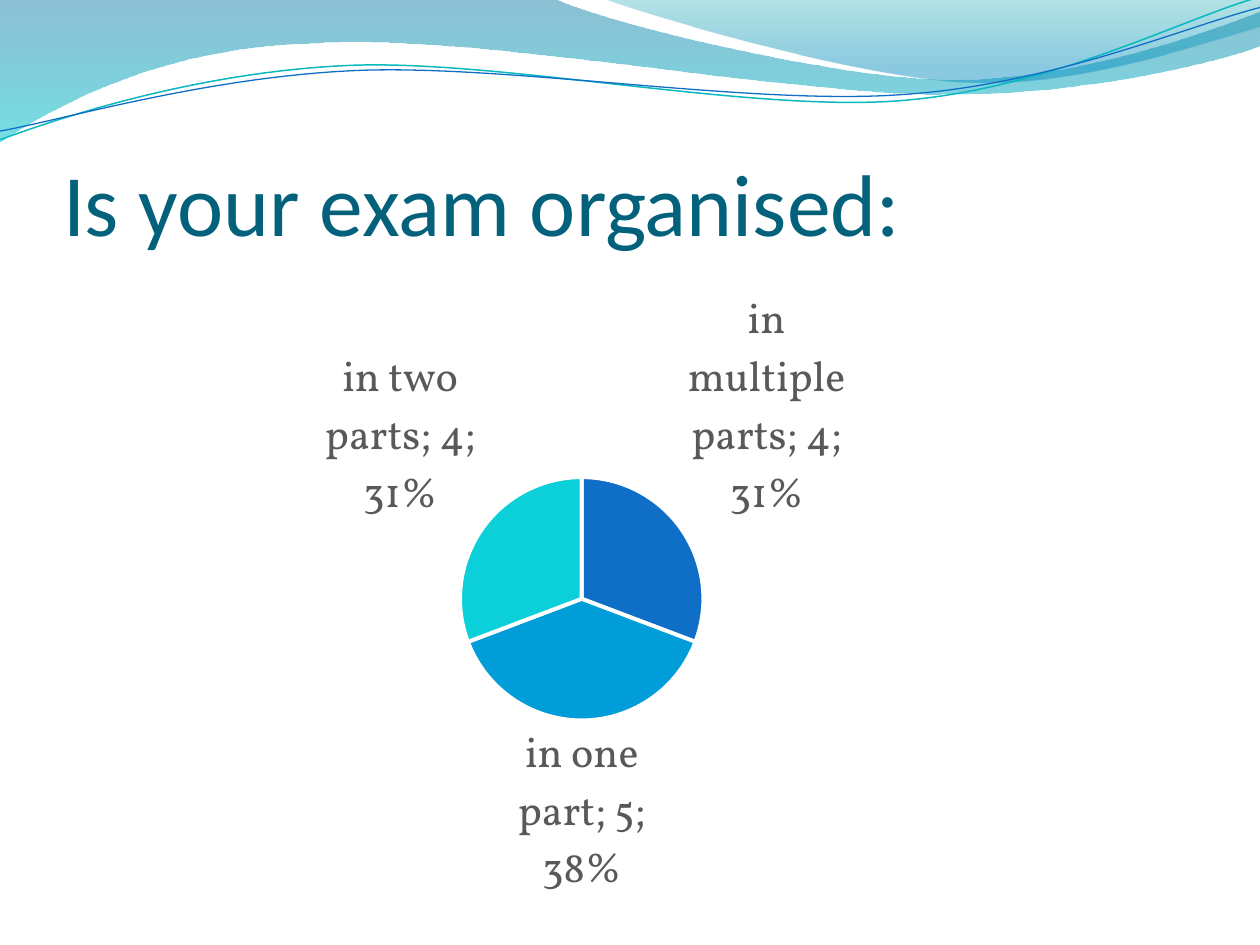
from math import cos, radians, sin

from lxml import etree
from pptx import Presentation
from pptx.chart.data import CategoryChartData
from pptx.dml.color import RGBColor
from pptx.enum.chart import XL_CHART_TYPE, XL_LABEL_POSITION
from pptx.enum.text import MSO_ANCHOR, PP_ALIGN
from pptx.oxml import parse_xml
from pptx.oxml.ns import nsdecls, qn
from pptx.util import Pt

PIE = XL_CHART_TYPE.PIE
OUTSIDE_END = XL_LABEL_POSITION.OUTSIDE_END
BOTTOM = MSO_ANCHOR.BOTTOM
LEFT = PP_ALIGN.LEFT
TITLE_ONLY = 5

WHITE = RGBColor(0xFF, 0xFF, 0xFF)
BLACK = RGBColor(0x00, 0x00, 0x00)
GREY = RGBColor(0x59, 0x59, 0x59)
TITLE_TEAL = RGBColor(0x04, 0x61, 0x7B)
LINE_TEAL = RGBColor(0x0A, 0xB8, 0xBF)
BLUE = RGBColor(0x0F, 0x6F, 0xC6)
SKY = RGBColor(0x00, 0x9D, 0xD9)
TURQUOISE = RGBColor(0x0B, 0xD0, 0xD9)
DEEP_TEAL = RGBColor(0x00, 0x74, 0xA1)
CYAN = RGBColor(0x00, 0xC6, 0xCF)
SEA = RGBColor(0x00, 0xA1, 0xA9)
OCEAN = RGBColor(0x00, 0x8B, 0xBF)

# Outlines in points: one point is a straight step, three are a Bezier curve
WIDE_WAVE = [[(0, 0)], [(316.8, -0.7)],
             [(342.7, 12.2), (478.1, 45.4), (545.8, 45.4)],
             [(614.2, 45.4), (689.8, 18.7), (720, 6.5)], [(720.7, 25.9)],
             [(707.8, 31.7), (626.4, 54.7), (537.1, 54)],
             [(447.8, 54), (275, 20.2), (185, 24.5)],
             [(92.9, 25.9), (33.1, 59.8), (-0.7, 81.4)]]
RIGHT_WAVE = [[(344.9, -0.7)], [(366.5, 7.9), (491, 44.6), (553.7, 46.8)],
              [(616.3, 49.7), (691.9, 23), (720, 15.1)], [(720, 0)]]
TEAL_LINE = [[(0, 79.9)], [(34.6, 67), (113.8, 41), (199.4, 37.4)],
             [(284.4, 33.8), (427, 64.1), (513.4, 57.6)],
             [(599.8, 51.1), (675.4, 10.8), (718.6, -1.4)]]
BLUE_LINE = [[(0, 74.9)], [(33.8, 69.1), (118.1, 43.9), (203.8, 40.3)],
             [(290.2, 36.7), (429.8, 60.5), (516.2, 54)],
             [(601.9, 48.2), (677.5, 15.1), (720, 4.3)]]
LINE_CENTER = (359.5, 41.5)
LINE_TILT = 2.7


def turn(point, center, degrees):
    """Turn a point clockwise around a center."""
    dx, dy = point[0] - center[0], point[1] - center[1]
    c, s = cos(radians(degrees)), sin(radians(degrees))
    return center[0] + dx * c - dy * s, center[1] + dx * s + dy * c


def add_outline(s, outline, close):
    steps = [[(Pt(x), Pt(y)) for x, y in step] for step in outline]
    builder = s.shapes.build_freeform(*steps[0][0])
    builder.add_line_segments([step[-1] for step in steps[1:]], close=close)
    sp = builder.convert_to_shape()
    sp.shadow.inherit = False

    # Give the curved steps their control points
    segments = list(sp._element.iter(qn("a:lnTo")))
    for segment, step in zip(segments, steps[1:]):
        if len(step) == 3:
            curve = etree.Element(qn("a:cubicBezTo"))
            for x, y in step:
                etree.SubElement(curve, qn("a:pt"),
                                 x=str(x - sp.left), y=str(y - sp.top))
            segment.getparent().replace(segment, curve)
    return sp


def add_wave(s, outline, stops):
    """Filled wave; stops are (position %, colour, opacity %)."""
    sp = add_outline(s, outline, True)
    sp.line.fill.background()
    sp.fill.background()
    grad = parse_xml(f'<a:gradFill {nsdecls("a")} rotWithShape="1"><a:gsLst/>'
                     '<a:lin ang="5400000" scaled="0"/></a:gradFill>')
    for position, color, opacity in stops:
        grad[0].append(parse_xml(
            f'<a:gs {nsdecls("a")} pos="{position * 1000}"><a:srgbClr val="{color}">'
            f'<a:alpha val="{opacity * 1000}"/></a:srgbClr></a:gs>'))
    spPr = sp._element.spPr
    spPr.replace(spPr.find(qn("a:noFill")), grad)


def add_wave_line(s, outline, color, width):
    """Open curve, laid level and then tilted as a shape."""
    level = [[turn(point, LINE_CENTER, LINE_TILT) for point in step]
             for step in outline]
    sp = add_outline(s, level, False)
    sp.rotation = 360 - LINE_TILT
    sp.fill.background()
    sp.line.color.rgb = color
    sp.line.width = Pt(width)


def set_font(font, name, size, color):
    font.name = name
    font.size = Pt(size)
    font.color.rgb = color


def set_title(s, text):
    title = s.shapes.title
    title.left, title.top = Pt(36), Pt(55.4)
    title.width, title.height = Pt(648), Pt(90)
    tf = title.text_frame
    tf.word_wrap = True
    tf.vertical_anchor = BOTTOM
    tf.margin_left = tf.margin_right = tf.margin_bottom = 0
    tf.margin_top = Pt(3.6)
    p = tf.paragraphs[0]
    p.alignment = LEFT
    r = p.add_run()
    r.text = text
    set_font(r.font, "Calibri", 50, TITLE_TEAL)


def add_pie(s, slices):
    """Pie chart; slices are (category, value, colour)."""
    data = CategoryChartData()
    data.categories = [name for name, _, _ in slices]
    data.add_series("Series 1", [value for _, value, _ in slices])
    chart = s.shapes.add_chart(PIE, Pt(42.5), Pt(162), Pt(572.4), Pt(362.9),
                               data).chart
    chart.has_title = False
    chart.has_legend = False
    set_font(chart.font, "Vollkorn", 10, BLACK)
    plot = chart.plots[0]
    plot.vary_by_categories = True
    for i, (_, _, color) in enumerate(slices):
        point = plot.series[0].points[i].format
        point.fill.solid()
        point.fill.fore_color.rgb = color
        point.line.color.rgb = WHITE
        point.line.width = Pt(2.25)

    # Labels: category; value; share
    labels = plot.series[0].data_labels
    labels.show_category_name = True
    labels.show_value = True
    labels.show_percentage = True
    labels.position = OUTSIDE_END
    set_font(labels.font, "Vollkorn", 24, GREY)
    show_bubble = labels._element.find(qn("c:showBubbleSize"))
    show_bubble.addnext(parse_xml(f'<c:separator {nsdecls("c")}>; </c:separator>'))


def main():
    prs = Presentation()
    prs.slide_width, prs.slide_height = Pt(720), Pt(540)
    s = prs.slides.add_slide(prs.slide_layouts[TITLE_ONLY])
    s.background.fill.solid()
    s.background.fill.fore_color.rgb = WHITE

    # Waves along the top edge
    add_wave(s, WIDE_WAVE, [(0, DEEP_TEAL, 45), (100, CYAN, 55)])
    add_wave(s, RIGHT_WAVE, [(0, SEA, 30), (80, OCEAN, 45)])
    add_wave_line(s, TEAL_LINE, LINE_TEAL, 0.85)
    add_wave_line(s, BLUE_LINE, BLUE, 0.75)

    # Question and answers
    set_title(s, "Is your exam organised:")
    add_pie(s, [("in multiple parts", 4, BLUE),
                ("in one part", 5, SKY),
                ("in two parts", 4, TURQUOISE)])
    prs.save("out.pptx")


if __name__ == "__main__":
    main()
